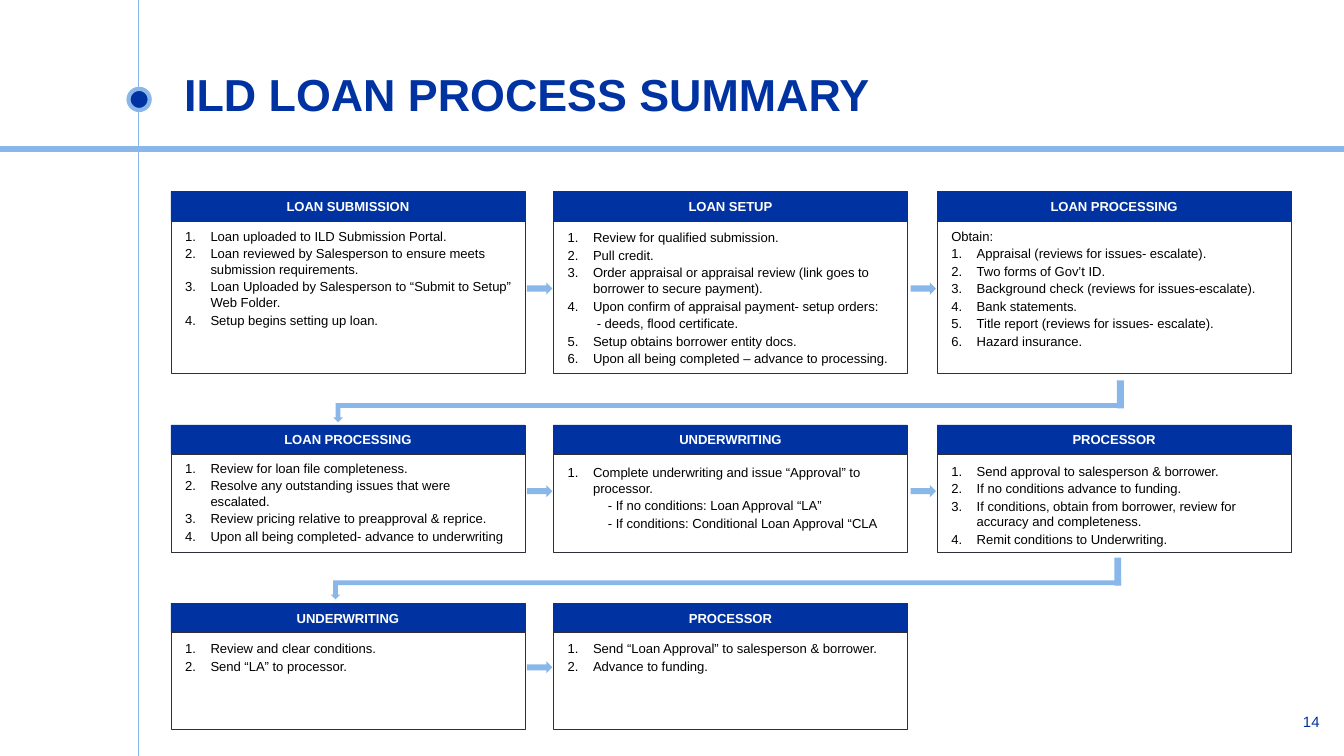
from dataclasses import dataclass

from lxml import etree
from pptx import Presentation
from pptx.dml.color import RGBColor
from pptx.enum.shapes import MSO_CONNECTOR, MSO_SHAPE
from pptx.enum.text import MSO_ANCHOR, MSO_AUTO_SIZE, PP_ALIGN
from pptx.oxml.ns import qn
from pptx.util import Cm, Pt

RECT, OVAL = MSO_SHAPE.RECTANGLE, MSO_SHAPE.OVAL
ARROW, BENT = MSO_SHAPE.RIGHT_ARROW, MSO_SHAPE.BENT_UP_ARROW
LEFT, CENTER, RIGHT = PP_ALIGN.LEFT, PP_ALIGN.CENTER, PP_ALIGN.RIGHT
STRAIGHT = MSO_CONNECTOR.STRAIGHT
MIDDLE, BOTTOM = MSO_ANCHOR.MIDDLE, MSO_ANCHOR.BOTTOM
NO_FIT = MSO_AUTO_SIZE.NONE

HEX = {"navy": "0033A1", "sky": "8AB7E9", "edge": "2E3037",
       "black": "000000", "white": "FFFFFF"}
FONT = "Arial"

# Lengths in centimetres
WIDE, HIGH = 25.4, 14.29
COLS = (3.23, 10.46, 17.71)
CARD_W, HEAD_H = 6.69, 0.56
HANG = 0.48


@dataclass
class Row:
    top: float
    body: float
    arrow: float


@dataclass
class Card:
    row: int
    col: int
    title: str
    steps: list[str]
    text_top: float
    lead: str = ""
    sub: float = 0  # extra indent of steps that start with a dash


ROWS = (Row(3.62, 2.88, 5.34), Row(8.03, 1.85, 9.17), Row(11.4, 1.83, 12.5))

CARDS = (
    Card(0, 0, "LOAN SUBMISSION", [
        "Loan uploaded to ILD Submission Portal.",
        "Loan reviewed by Salesperson to ensure meets submission requirements.",
        "Loan Uploaded by Salesperson to “Submit to Setup” Web Folder.",
        "Setup begins setting up loan."], 4.19),
    Card(0, 1, "LOAN SETUP", [
        "Review for qualified submission.",
        "Pull credit.",
        "Order appraisal or appraisal review (link goes to borrower to secure payment).",
        "Upon confirm of appraisal payment- setup orders:",
        "- deeds, flood certificate.",
        "Setup obtains borrower entity docs.",
        "Upon all being completed – advance to processing."], 4.22, sub=0.07),
    Card(0, 2, "LOAN PROCESSING", [
        "Appraisal (reviews for issues- escalate).",
        "Two forms of Gov’t ID.",
        "Background check (reviews for issues-escalate).",
        "Bank statements.",
        "Title report (reviews for issues- escalate).",
        "Hazard insurance."], 4.19, lead="Obtain:"),
    Card(1, 0, "LOAN PROCESSING", [
        "Review for loan file completeness.",
        "Resolve any outstanding issues that were escalated.",
        "Review pricing relative to preapproval & reprice.",
        "Upon all being completed- advance to underwriting"], 8.57),
    Card(1, 1, "UNDERWRITING", [
        "Complete underwriting and issue “Approval” to processor.",
        "- If no conditions: Loan Approval “LA”",
        "- If conditions: Conditional Loan Approval “CLA"], 8.66, sub=0.28),
    Card(1, 2, "PROCESSOR", [
        "Send approval to salesperson & borrower.",
        "If no conditions advance to funding.",
        "If conditions, obtain from borrower, review for accuracy and completeness.",
        "Remit conditions to Underwriting."], 8.63),
    Card(2, 0, "UNDERWRITING", [
        "Review and clear conditions.",
        "Send “LA” to processor."], 11.99),
    Card(2, 1, "PROCESSOR", [
        "Send “Loan Approval” to salesperson & borrower.",
        "Advance to funding."], 11.99),
)


def color(name: str) -> RGBColor:
    return RGBColor.from_string(HEX[name])


def style(para, size: float, tint: str, bold: bool = False, align=LEFT) -> None:
    para.alignment = align
    for run in para.runs:
        font = run.font
        font.name, font.size, font.bold = FONT, Pt(size), bold
        font.color.rgb = color(tint)


def inset(frame, size: float) -> None:
    frame.margin_left = frame.margin_right = Cm(size)
    frame.margin_top = frame.margin_bottom = Cm(size)


def add_shape(slide, kind, x: float, y: float, w: float, h: float,
              fill: str = "", edge: str = "", weight: float = 0.25):
    shape = slide.shapes.add_shape(kind, Cm(x), Cm(y), Cm(w), Cm(h))
    shape.shadow.inherit = False
    if fill:
        shape.fill.solid()
        shape.fill.fore_color.rgb = color(fill)
    else:
        shape.fill.background()
    if edge:
        shape.line.color.rgb = color(edge)
        shape.line.width = Pt(weight)
    else:
        shape.line.fill.background()
    return shape


def add_line(slide, x1: float, y1: float, x2: float, y2: float, weight: float) -> None:
    line = slide.shapes.add_connector(STRAIGHT, Cm(x1), Cm(y1), Cm(x2), Cm(y2))
    line.line.color.rgb = color("sky")
    line.line.width = Pt(weight)
    etree.SubElement(line._element.spPr, qn("a:effectLst"))


def add_steps(slide, card: Card) -> None:
    box = slide.shapes.add_textbox(Cm(COLS[card.col] + 0.02), Cm(card.text_top),
                                   Cm(CARD_W), Cm(ROWS[card.row].body))
    frame = box.text_frame
    frame.word_wrap = True
    lines = [(card.lead, HANG, -HANG)] if card.lead else []
    count = 0
    for step in card.steps:
        if step.startswith("-"):
            lines.append((step, HANG + card.sub, 0))
        else:
            count += 1
            lines.append((f"{count}.\t{step}", HANG, -HANG))
    for i, (text, left, first) in enumerate(lines):
        para = frame.add_paragraph() if i else frame.paragraphs[0]
        para.text = text
        props = para._p.get_or_add_pPr()
        props.set("marL", str(Cm(left)))
        props.set("indent", str(Cm(first)))
        para.space_after = Pt(1)
        style(para, 7, "black")


def add_card(slide, card: Card) -> None:
    x, row = COLS[card.col], ROWS[card.row]
    add_shape(slide, RECT, x, row.top + HEAD_H, CARD_W, row.body, edge="edge")
    head = add_shape(slide, RECT, x, row.top, CARD_W, HEAD_H, "navy", "edge")
    frame = head.text_frame
    frame.text = card.title
    frame.vertical_anchor = MIDDLE
    style(frame.paragraphs[0], 7, "white", True, CENTER)
    add_steps(slide, card)
    if card.col:
        add_shape(slide, ARROW, x - 0.5, row.arrow, 0.48, 0.23, "sky")


def add_return(slide, x: float, y: float) -> None:
    bend = add_shape(slide, BENT, x, y, 14.94, 0.36, "sky")
    bend.rotation = 180
    add_shape(slide, RECT, x + 14.81, y - 0.43, 0.13, 0.53, "sky")


def main() -> None:
    deck = Presentation()
    deck.slide_width, deck.slide_height = Cm(WIDE), Cm(HIGH)
    slide = deck.slides.add_slide(deck.slide_layouts[5])

    # Rules and marker
    add_line(slide, 2.62, 0, 2.62, HIGH, 0.75)
    add_line(slide, 0, 2.82, WIDE, 2.82, 3)
    add_shape(slide, OVAL, 2.43, 1.68, 0.4, 0.4, "navy", "sky", 2.25)

    # Title
    title = slide.shapes.title
    title.left, title.top, title.width, title.height = Cm(3.23), Cm(1.56), Cm(20.45), Cm(0.97)
    frame = title.text_frame
    frame.text = "ILD LOAN PROCESS SUMMARY"
    frame.auto_size, frame.vertical_anchor = NO_FIT, BOTTOM
    inset(frame, 0.25)
    style(frame.paragraphs[0], 24, "navy", True)

    # Process cards and the paths to the next row
    for card in CARDS:
        add_card(slide, card)
    add_return(slide, 6.3, 7.62)
    add_return(slide, 6.25, 10.97)

    # Page number
    page = slide.shapes.add_textbox(Cm(23.67), Cm(13.21), Cm(1.52), Cm(0.86)).text_frame
    page.word_wrap = True
    page.vertical_anchor = MIDDLE
    page.text = "14"
    inset(page, 0.25)
    style(page.paragraphs[0], 8, "navy", align=RIGHT)

    deck.save("out.pptx")


if __name__ == "__main__":
    main()
